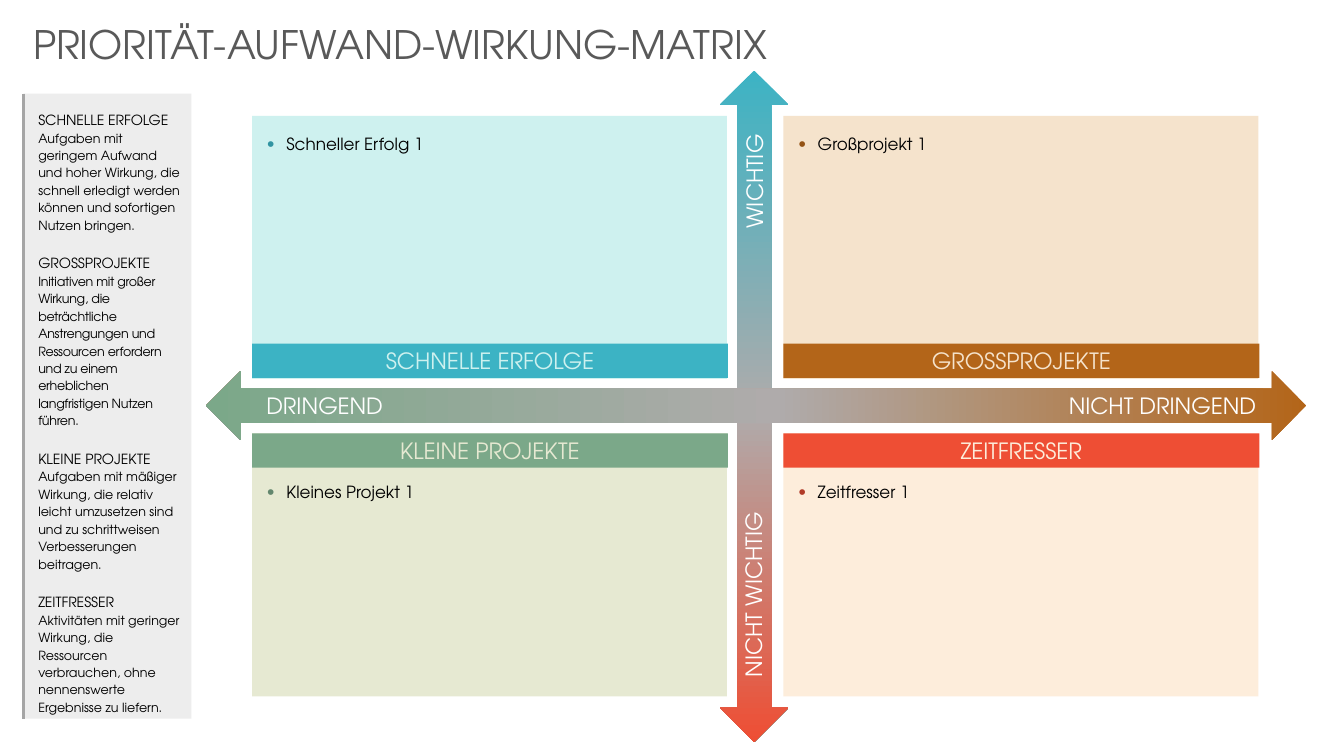
from lxml.etree import SubElement
from pptx import Presentation
from pptx.dml.color import RGBColor
from pptx.enum.shapes import MSO_CONNECTOR, MSO_SHAPE
from pptx.enum.text import MSO_ANCHOR, MSO_AUTO_SIZE, PP_ALIGN
from pptx.oxml import parse_xml
from pptx.oxml.ns import nsdecls, qn
from pptx.util import Inches, Pt

FONT = "TeX Gyre Adventor"


def add_box(kind, x, y, w, h, fill=None):
    """Add a preset shape without line or shadow."""
    sp = s.shapes.add_shape(kind, Inches(x), Inches(y), Inches(w), Inches(h))
    sp.shadow.inherit = False
    sp.line.fill.background()
    if fill:
        sp.fill.solid()
        sp.fill.fore_color.rgb = RGBColor.from_string(fill)
    return sp


def write(sp, text, size, color="000000", align=PP_ALIGN.LEFT, anchor=MSO_ANCHOR.TOP,
          margins=(0, 0, 0, 0), spacing=None, before=None, after=None, spc=None):
    """Add one paragraph to a shape and return it."""
    tf = sp.text_frame
    tf.word_wrap = True
    tf.vertical_anchor = anchor
    tf.margin_left, tf.margin_top, tf.margin_right, tf.margin_bottom = map(Inches, margins)
    p = tf.add_paragraph() if tf.text else tf.paragraphs[0]
    p.alignment = align
    p.line_spacing = spacing
    p.space_before = before
    p.space_after = after
    r = p.add_run()
    r.text = text
    r.font.name = FONT
    r.font.size = Pt(size)
    r.font.color.rgb = RGBColor.from_string(color)
    if spc:
        r.font._element.set("spc", str(spc))
    return p


prs = Presentation()
prs.slide_width, prs.slide_height = Inches(13.33), Inches(7.5)
s = prs.slides.add_slide(prs.slide_layouts[6])

# Title
title = s.shapes.add_textbox(Inches(0.23), Inches(0.15), Inches(9.33), Inches(0.57))
write(title, "PRIORITÄT-AUFWAND-WIRKUNG-MATRIX", 28, "595959", margins=(0.1, 0.05, 0.1, 0.05))
title.text_frame.auto_size = MSO_AUTO_SIZE.SHAPE_TO_FIT_TEXT

# Sidebar with definitions
definitions = [
    ("SCHNELLE ERFOLGE", "Aufgaben mit geringem Aufwand und hoher Wirkung, die schnell "
     "erledigt werden können und sofortigen Nutzen bringen.", None),
    ("GROSSPROJEKTE", "Initiativen mit großer Wirkung, die beträchtliche Anstrengungen und "
     "Ressourcen erfordern und zu einem erheblichen langfristigen Nutzen führen.", -20),
    ("KLEINE PROJEKTE", "Aufgaben mit mäßiger Wirkung, die relativ leicht umzusetzen sind "
     "und zu schrittweisen Verbesserungen beitragen.", None),
    ("ZEITFRESSER", "Aktivitäten mit geringer Wirkung, die Ressourcen verbrauchen, ohne "
     "nennenswerte Ergebnisse zu liefern.", None),
]
sidebar = add_box(MSO_SHAPE.RECTANGLE, 0.23, 0.93, 1.67, 6.2, "EDEDED")
for i, (heading, body, spc) in enumerate(definitions):
    write(sidebar, heading, 10, margins=(0.15, 0.15, 0.1, 0.05), spacing=1.15,
          before=Pt(13.9) if i else None)
    write(sidebar, body, 9, margins=(0.15, 0.15, 0.1, 0.05), spacing=1.15, spc=spc)

# Axis arrows with three-stop gradients
arrows = [
    (7.14, 0.7, 6.66, 0, [(0, "3CB3C4"), (51, "AFABAB"), (100, "EE4E34")]),
    (7.16, -1.43, 10.91, 90, [(0, "B36519"), (48, "AFABAB"), (100, "7BA889")]),
]
for x, y, length, rotation, stops in arrows:
    arrow = add_box(MSO_SHAPE.UP_DOWN_ARROW, x, y, 0.68, length)
    arrow.rotation = rotation
    arrow.adjustments[0] = 0.463
    arrow.adjustments[1] = 0.5
    gs = "".join(f'<a:gs pos="{pos * 1000}"><a:srgbClr val="{c}"/></a:gs>' for pos, c in stops)
    grad = parse_xml(f'<a:gradFill {nsdecls("a")} rotWithShape="1"><a:gsLst>{gs}</a:gsLst>'
                     '<a:lin ang="5400000" scaled="0"/></a:gradFill>')
    arrow._element.spPr.find(qn("a:prstGeom")).addnext(grad)

# Axis labels
labels = [
    ("DRINGEND", 2.42, 3.87, 1.6, 0),
    ("NICHT DRINGEND", 10.58, 3.87, 1.9, 0),
    ("NICHT WICHTIG", 6.39, 5.75, 2.16, 270),
    ("WICHTIG", 6.58, 1.65, 1.8, 270),
]
for text, x, y, w, rotation in labels:
    label = s.shapes.add_textbox(Inches(x), Inches(y), Inches(w), Inches(0.3))
    label.rotation = rotation
    write(label, text, 16, "FFFFFF", PP_ALIGN.CENTER, MSO_ANCHOR.MIDDLE)

# Quadrants: panel with a bulleted item, header bar on the side of the horizontal axis
quadrants = [
    ("SCHNELLE ERFOLGE", "Schneller Erfolg 1", "CEF1EF", "3CB3C4", "3194A2"),
    ("GROSSPROJEKTE", "Großprojekt 1", "F5E3CC", "B36519", "945315"),
    ("KLEINE PROJEKTE", "Kleines Projekt 1", "E6E9D2", "7BA889", "63876E"),
    ("ZEITFRESSER", "Zeitfresser 1", "FDEDDB", "EE4E34", "B13B28"),
]
for i, (name, item, light, dark, bullet) in enumerate(quadrants):
    row, col = divmod(i, 2)
    x = (2.5, 7.77)[col]
    panel = add_box(MSO_SHAPE.RECTANGLE, x, (1.15, 4.3)[row], 4.71, 2.61, light)
    p = write(panel, item, 12, margins=(0.15, (0.15, 0.45)[row], 0.1, 0.05),
              spacing=1.15, after=Pt(8))
    pPr = p._p.get_or_add_pPr()
    pPr.set("marL", str(Inches(0.19)))
    pPr.set("indent", str(-Inches(0.19)))
    SubElement(SubElement(pPr, qn("a:buClr")), qn("a:srgbClr"), val=bullet)
    SubElement(pPr, qn("a:buSzPct"), val="125000")
    SubElement(pPr, qn("a:buFont"), typeface="Arial")
    SubElement(pPr, qn("a:buChar"), char="•")
    header = add_box(MSO_SHAPE.RECTANGLE, x, (3.41, 4.3)[row], 4.72, 0.34, dark)
    write(header, name, 16, light, PP_ALIGN.CENTER, MSO_ANCHOR.MIDDLE)

# Sidebar edge
edge = s.shapes.add_connector(MSO_CONNECTOR.STRAIGHT, Inches(0.23), Inches(0.93),
                              Inches(0.23), Inches(7.13))
edge.line.color.rgb = RGBColor.from_string("A5A5A5")
edge.line.width = Pt(2)
SubElement(edge._element.spPr, qn("a:effectLst"))

prs.save("out.pptx")
